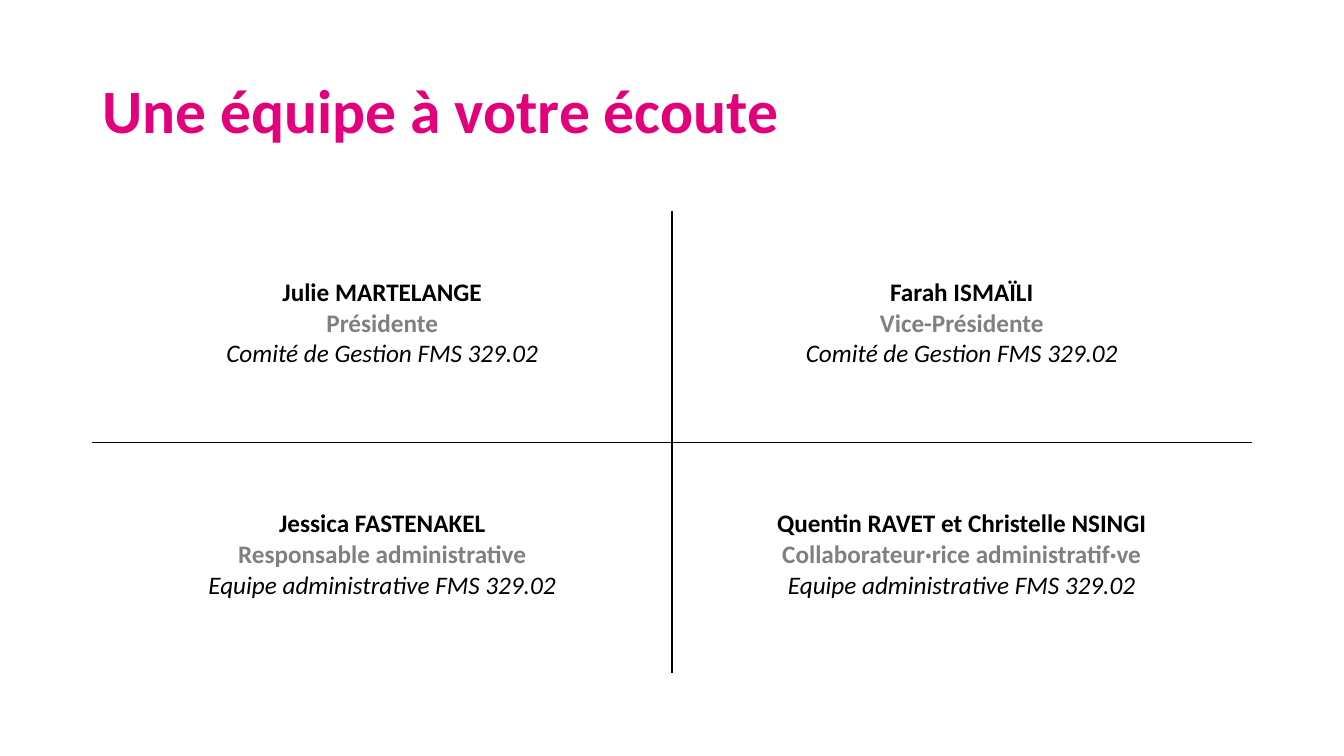
"""Build the slide presenting the team in a two by two grid."""
from dataclasses import dataclass

from lxml.etree import SubElement as Sub
from pptx import Presentation
from pptx.dml.color import RGBColor
from pptx.enum.text import MSO_ANCHOR as Anchor, PP_ALIGN as Align
from pptx.oxml.ns import qn
from pptx.slide import Slide
from pptx.table import _Cell as Cell
from pptx.util import Cm, Pt

FONT = "Calibri"
PINK, BLACK, GREY, WHITE = "E2017B", "000000", "808080", "FFFFFF"
LEFT, WIDTH = Cm(2.33), Cm(29.21)
ROW = Cm(5.83)


@dataclass
class Member:
    name: str
    role: str
    group: str


BOARD = "Comité de Gestion FMS 329.02"
STAFF = "Equipe administrative FMS 329.02"
TEAM = [
    [Member("Julie MARTELANGE", "Présidente", BOARD),
     Member("Farah ISMAÏLI", "Vice-Présidente", BOARD)],
    [Member("Jessica FASTENAKEL", "Responsable administrative", STAFF),
     Member("Quentin RAVET et Christelle NSINGI",
            "Collaborateur·rice administratif·ve", STAFF)],
]


def paint(color, value: str) -> None:
    color.rgb = RGBColor.from_string(value)


def write(para, text: str, size: float, color: str,
          bold: bool = False, slant: bool = False) -> None:
    run = para.add_run()
    run.text = text
    font = run.font
    font.name, font.size = FONT, Pt(size)
    font.bold, font.italic = bold, slant
    paint(font.color, color)


def edge(cell: Cell, side: str, color: str) -> None:
    line = Sub(cell._tc.get_or_add_tcPr(), qn(f"a:ln{side}"), w=str(Pt(1)))
    fill = Sub(line, qn("a:solidFill"))
    Sub(fill, qn("a:srgbClr"), val=color)


def fill_cell(cell: Cell, who: Member, row: int, col: int) -> None:
    inner = {"L": col == 1, "R": col == 0, "T": row == 1, "B": row == 0}
    for side, shown in inner.items():
        edge(cell, side, BLACK if shown else WHITE)
    cell.fill.background()
    cell.vertical_anchor = Anchor.TOP
    cell.margin_top = Cm(1.67)
    frame = cell.text_frame
    lines = [(who.name, BLACK, True, False),
             (who.role, GREY, True, False),
             (who.group, BLACK, False, True)]
    for i, (text, color, bold, slant) in enumerate(lines):
        para = frame.add_paragraph() if i else frame.paragraphs[0]
        para.alignment = Align.CENTER
        write(para, text, 18, color, bold, slant)


def add_title(slide: Slide, text: str) -> None:
    title = slide.shapes.title
    title.left, title.top = LEFT, Cm(1.01)
    title.width, title.height = WIDTH, Cm(3.68)
    frame = title.text_frame
    frame.vertical_anchor = Anchor.MIDDLE
    para = frame.paragraphs[0]
    para.alignment = Align.LEFT
    para.line_spacing = 0.9
    write(para, text, 44, PINK, bold=True)


def add_team(slide: Slide) -> None:
    table = slide.shapes.add_table(
        len(TEAM), len(TEAM[0]), LEFT, Cm(5.32), WIDTH, ROW * len(TEAM)).table
    table.first_row = table.horz_banding = False
    for r, group in enumerate(TEAM):
        for c, who in enumerate(group):
            fill_cell(table.cell(r, c), who, r, c)


def main() -> None:
    deck = Presentation()
    deck.slide_width, deck.slide_height = Cm(33.87), Cm(19.05)
    slide = deck.slides.add_slide(deck.slide_layouts[5])
    add_title(slide, "Une équipe à votre écoute")
    add_team(slide)
    deck.save("out.pptx")


if __name__ == "__main__":
    main()
